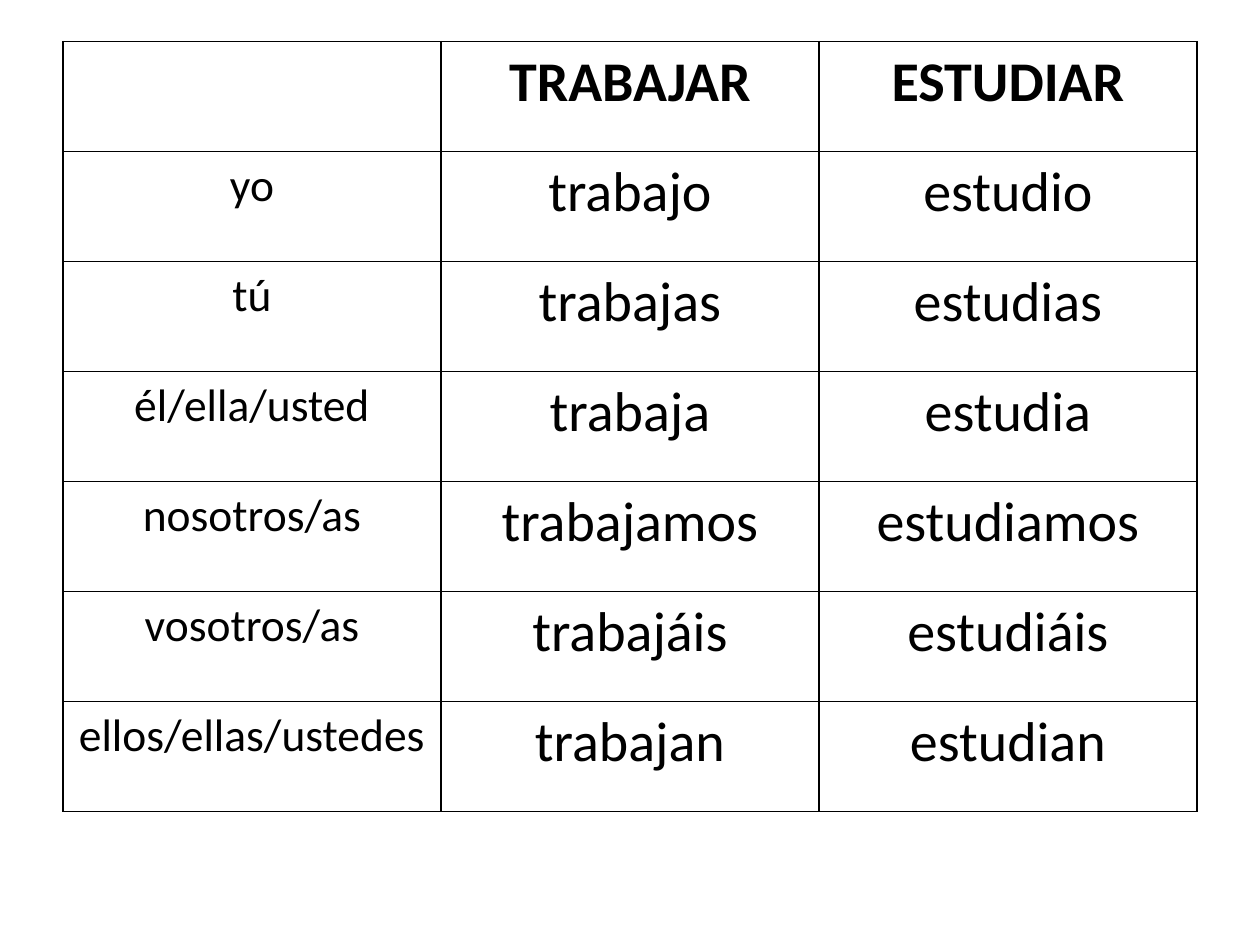
"""Build a slide with a Spanish present-tense conjugation table."""
from lxml.etree import SubElement
from pptx import Presentation
from pptx.dml.color import RGBColor
from pptx.enum.text import PP_ALIGN
from pptx.oxml.ns import qn
from pptx.util import Inches, Pt

ROWS = [
    ("", "TRABAJAR", "ESTUDIAR"),
    ("yo", "trabajo", "estudio"),
    ("tú", "trabajas", "estudias"),
    ("él/ella/usted", "trabaja", "estudia"),
    ("nosotros/as", "trabajamos", "estudiamos"),
    ("vosotros/as", "trabajáis", "estudiáis"),
    ("ellos/ellas/ustedes", "trabajan", "estudian"),
]
FONT, INK = "Calibri", "000000"
PRONOUN_SIZE, VERB_SIZE = 26, 32
LEFT, TOP, COL_W, ROW_H = 0.5, 0.33, 3, 0.873


def set_borders(cell, color, width):
    tc_pr = cell._tc.get_or_add_tcPr()
    for side in ("a:lnL", "a:lnR", "a:lnT", "a:lnB"):
        ln = SubElement(tc_pr, qn(side), w=str(Pt(width)))
        fill = SubElement(ln, qn("a:solidFill"))
        SubElement(fill, qn("a:srgbClr"), val=color)


def fill_cell(cell, text, size, bold):
    set_borders(cell, INK, 1)
    cell.fill.background()
    p = cell.text_frame.paragraphs[0]
    p.text = text
    p.alignment = PP_ALIGN.CENTER
    for r in p.runs:
        r.font.name = FONT
        r.font.size = Pt(size)
        r.font.bold = bold
        r.font.color.rgb = RGBColor.from_string(INK)


def main():
    prs = Presentation()
    prs.slide_width, prs.slide_height = Inches(10), Inches(7.5)
    s = prs.slides.add_slide(prs.slide_layouts[6])
    n_rows, n_cols = len(ROWS), len(ROWS[0])
    table = s.shapes.add_table(
        n_rows, n_cols, Inches(LEFT), Inches(TOP),
        Inches(COL_W * n_cols), Inches(ROW_H * n_rows)).table
    table.horz_banding = False
    for i, row in enumerate(ROWS):
        table.rows[i].height = Inches(ROW_H)
        for j, text in enumerate(row):
            size = VERB_SIZE if j else PRONOUN_SIZE
            fill_cell(table.cell(i, j), text, size, i == 0)
    prs.save("out.pptx")


if __name__ == "__main__":
    main()
